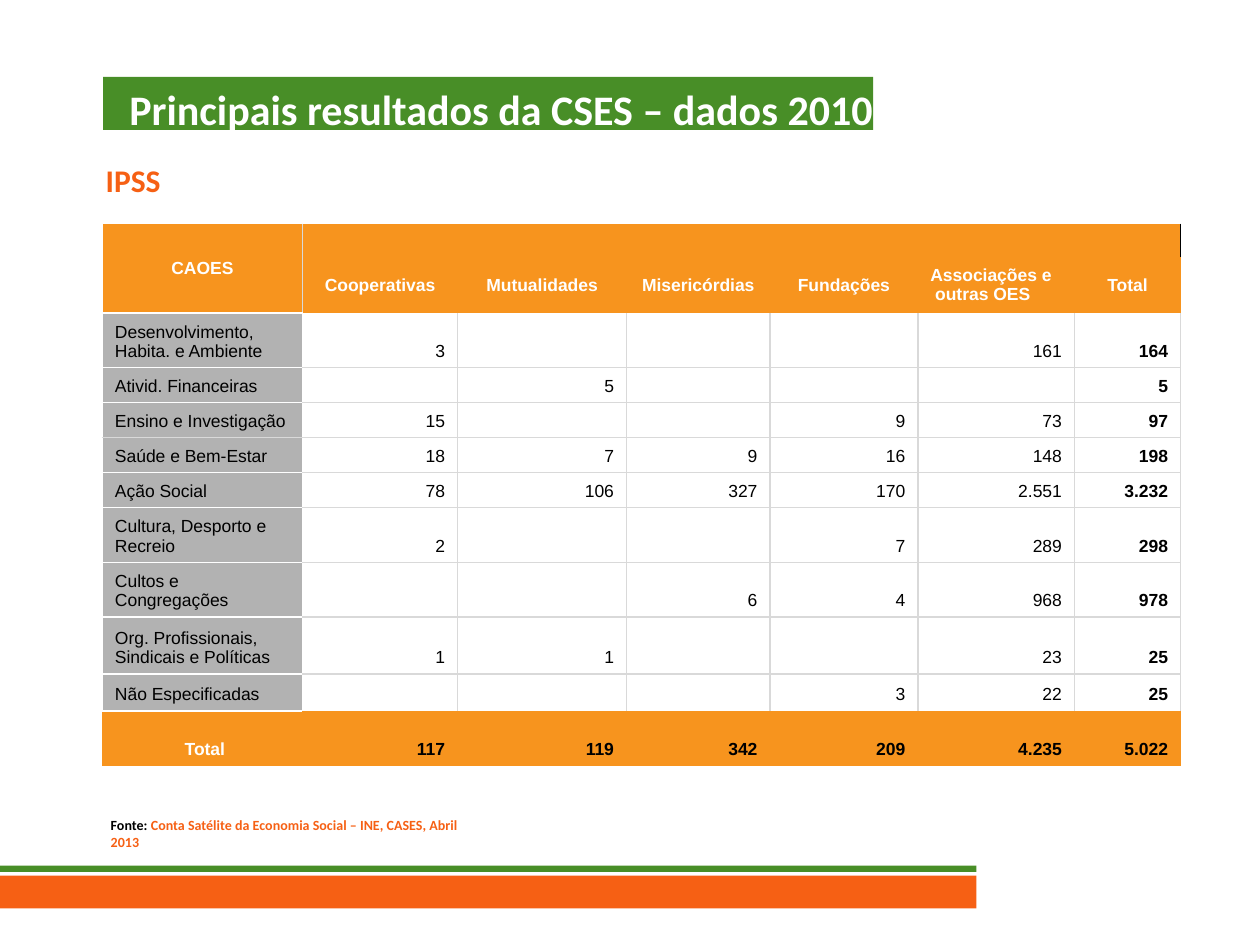
from dataclasses import dataclass
from typing import Any, Optional

from lxml import etree
from pptx import Presentation
from pptx import util as u
from pptx.dml import color
from pptx.enum import shapes, text
from pptx.oxml import ns

GREEN, VIVID, AMBER = "488E27", "F66014", "F7941E"
GREY, RULE, WHITE, BLACK = "B2B2B2", "D9D9D9", "FFFFFF", "000000"
LEFT, CENTER, RIGHT = text.PP_ALIGN.LEFT, text.PP_ALIGN.CENTER, text.PP_ALIGN.RIGHT

HEADERS = ["CAOES", "Cooperativas", "Mutualidades", "Misericórdias", "Fundações",
           "Associações e\n outras OES", "Total"]
ROWS = [
    ["Desenvolvimento,\nHabita. e Ambiente", "3", "", "", "", "161", "164"],
    ["Ativid. Financeiras", "", "5", "", "", "", "5"],
    ["Ensino e Investigação", "15", "", "", "9", "73", "97"],
    ["Saúde e Bem-Estar", "18", "7", "9", "16", "148", "198"],
    ["Ação Social", "78", "106", "327", "170", "2.551", "3.232"],
    ["Cultura, Desporto e\nRecreio", "2", "", "", "7", "289", "298"],
    ["Cultos e\nCongregações", "", "", "6", "4", "968", "978"],
    ["Org. Profissionais,\nSindicais e Políticas", "1", "1", "", "", "23", "25"],
    ["Não Especificadas", "", "", "", "3", "22", "25"],
    ["\N{NO-BREAK SPACE}Total", "117", "119", "342", "209", "4.235", "5.022"],
]
GRID = [[HEADERS[0]] + [""] * 6, [""] + HEADERS[1:]] + ROWS
COLUMN_WIDTHS = [114.3, 88.7, 96.5, 82, 84.5, 89.5, 60.7]
ROW_HEIGHTS = [18.7, 31.8, 31, 20, 20, 20, 20, 31, 31, 32.6, 21, 31.6]
FIRST_BODY, TOTAL_ROW, LAST_COLUMN = 2, len(GRID) - 1, len(HEADERS) - 1
GREY_RULED_ROWS = {4, 5}


@dataclass
class Bar:
    left: float
    top: float
    width: float
    height: float
    fill: str


@dataclass
class Caption:
    left: float
    top: float
    width: float
    height: float
    runs: list[tuple[str, str]]
    size: float


BARS = [Bar(0, 500.4, 558, 18.7, VIVID), Bar(0, 494.6, 558, 3.6, GREEN)]
TITLE_BAR = Bar(59, 43.9, 440, 30.3, GREEN)
CAPTIONS = [
    Caption(56.2, 463, 229.5, 48.2,
            [("Fonte: ", BLACK),
             ("Conta Satélite da Economia Social – INE, CASES, Abril 2013", VIVID)], 8),
    Caption(53.3, 88.6, 206, 28.8, [("IPSS", VIVID)], 18),
]


def rgb(value: str) -> color.RGBColor:
    return color.RGBColor.from_string(value)


def apply_format(target: Any, values: dict[str, Any]) -> None:
    for name, value in values.items():
        setattr(target, name, value)


def add_run(paragraph: Any, content: str, size: float, fill: str,
            font: str = "Calibri", bold: bool = True) -> None:
    run = paragraph.add_run()
    run.text = content
    apply_format(run.font, {"name": font, "size": u.Pt(size), "bold": bold})
    run.font.color.rgb = rgb(fill)


def hang(paragraph: Any, amount: float) -> None:
    properties = paragraph._p.get_or_add_pPr()
    properties.set("marL", str(u.Pt(amount)))
    properties.set("indent", str(u.Pt(-amount)))


def add_bar(slide: Any, bar: Bar) -> Any:
    shape = slide.shapes.add_shape(
        shapes.MSO_SHAPE.RECTANGLE,
        u.Pt(bar.left), u.Pt(bar.top), u.Pt(bar.width), u.Pt(bar.height))
    shape.shadow.inherit = False
    shape.fill.solid()
    shape.fill.fore_color.rgb = rgb(bar.fill)
    shape.line.fill.background()
    return shape


def add_title(slide: Any) -> None:
    frame = add_bar(slide, TITLE_BAR).text_frame
    apply_format(frame, {
        "margin_left": 0, "margin_right": 0, "margin_top": u.Pt(2), "margin_bottom": 0,
        "word_wrap": True, "vertical_anchor": text.MSO_ANCHOR.TOP})
    paragraph = frame.paragraphs[0]
    apply_format(paragraph, {"alignment": RIGHT, "line_spacing": 1.06})
    hang(paragraph, 15)
    add_run(paragraph, "Principais resultados da CSES – dados 2010", 24, WHITE)


def add_caption(slide: Any, caption: Caption) -> None:
    box = slide.shapes.add_textbox(u.Pt(caption.left), u.Pt(caption.top),
                                   u.Pt(caption.width), u.Pt(caption.height))
    box.text_frame.word_wrap = True
    for content, fill in caption.runs:
        add_run(box.text_frame.paragraphs[0], content, caption.size, fill)


def cell_borders(row: int, column: int) -> dict[str, str]:
    if row == TOTAL_ROW:
        return {"T": WHITE} if column == 0 else {}
    if row < FIRST_BODY:
        if column == 0:
            return {"L": WHITE, "R": RULE, "B": WHITE}
        sides = {"L": RULE} if column == 1 else {}
        return sides | {"R": BLACK} if row == 0 and column in (1, LAST_COLUMN) else sides
    if column == 0:
        top = RULE if row - 1 in GREY_RULED_ROWS - {5} or row == 6 and False else WHITE
        bottom = RULE if row in GREY_RULED_ROWS else WHITE
        return {"L": WHITE, "T": top, "B": bottom}
    sides = {"R": RULE}
    if column > 1:
        sides["L"] = RULE
    if row > FIRST_BODY:
        sides["T"] = RULE
    if row < TOTAL_ROW - 1:
        sides["B"] = RULE
    return sides


def draw_borders(cell: Any, borders: dict[str, str]) -> None:
    properties = cell._tc.get_or_add_tcPr()
    for side in "LRTB":
        line = etree.SubElement(properties, ns.qn(f"a:ln{side}"), w=str(u.Pt(1)))
        if side in borders:
            fill = etree.SubElement(line, ns.qn("a:solidFill"))
            etree.SubElement(fill, ns.qn("a:srgbClr"), val=borders[side])
        else:
            etree.SubElement(line, ns.qn("a:noFill"))


def cell_fill(row: int, column: int) -> Optional[str]:
    if row < FIRST_BODY or row == TOTAL_ROW:
        return AMBER
    return GREY if column == 0 else None


def fill_cell(cell: Any, row: int, column: int) -> None:
    header, total = row < FIRST_BODY, row == TOTAL_ROW
    draw_borders(cell, cell_borders(row, column))
    fill = cell_fill(row, column)
    if fill:
        cell.fill.solid()
        cell.fill.fore_color.rgb = rgb(fill)
    else:
        cell.fill.background()
    cell.vertical_anchor = text.MSO_ANCHOR.MIDDLE if header else text.MSO_ANCHOR.BOTTOM
    lines = GRID[row][column].split("\n")
    if header:
        alignment = CENTER if len(lines) == 1 else LEFT
    elif column:
        alignment = RIGHT
    else:
        alignment = CENTER if total else LEFT
    ink = WHITE if header or (total and column == 0) else BLACK
    bold = header or total or column == LAST_COLUMN
    for index, content in enumerate(lines):
        frame = cell.text_frame
        paragraph = frame.add_paragraph() if index else frame.paragraphs[0]
        paragraph.alignment = alignment
        hang(paragraph, 27)
        if content:
            add_run(paragraph, content, 10, ink, "Arial", bold)
        else:
            etree.SubElement(paragraph._p, ns.qn("a:endParaRPr"), sz="1000")


def add_results_table(slide: Any) -> None:
    table = slide.shapes.add_table(
        len(GRID), len(HEADERS), u.Pt(58.5), u.Pt(127.8),
        u.Pt(sum(COLUMN_WIDTHS)), u.Pt(sum(ROW_HEIGHTS))).table
    apply_format(table, {"first_row": False, "horz_banding": False})
    for column, width in zip(table.columns, COLUMN_WIDTHS):
        column.width = u.Pt(width)
    for row, height in zip(table.rows, ROW_HEIGHTS):
        row.height = u.Pt(height)
    for row, values in enumerate(GRID):
        for column in range(len(values)):
            fill_cell(table.cell(row, column), row, column)
    table.cell(0, 0).merge(table.cell(1, 0))
    table.cell(0, 1).merge(table.cell(0, LAST_COLUMN))


def main() -> None:
    presentation = Presentation()
    apply_format(presentation, {"slide_width": u.Pt(720), "slide_height": u.Pt(540)})
    slide = presentation.slides.add_slide(presentation.slide_layouts[6])
    for bar in BARS:
        add_bar(slide, bar)
    add_title(slide)
    for caption in CAPTIONS:
        add_caption(slide, caption)
    add_results_table(slide)
    presentation.save("out.pptx")


if __name__ == "__main__":
    main()
